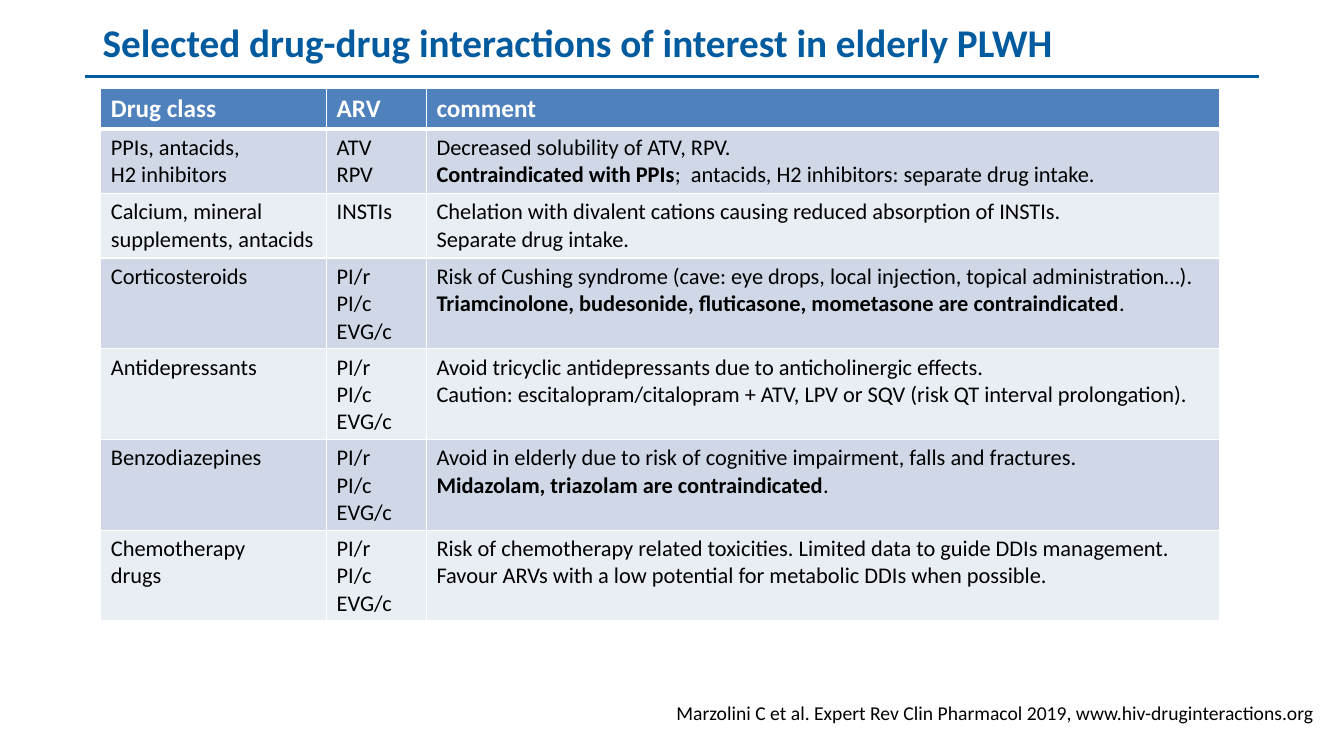
from lxml import etree
from pptx import Presentation
from pptx.dml.color import RGBColor
from pptx.enum.shapes import MSO_CONNECTOR
from pptx.enum.text import MSO_AUTO_SIZE
from pptx.oxml.ns import qn
from pptx.util import Pt

STRAIGHT = MSO_CONNECTOR.STRAIGHT
GROW = MSO_AUTO_SIZE.SHAPE_TO_FIT_TEXT
EMU_PER_PX = 9144
EMU_PER_POINT = 12700
COLORS = {
    "title": "025B9E",
    "text": "000000",
    "white": "FFFFFF",
    "header": "4F81BD",
    "odd_row": "D0D8E8",
    "even_row": "E9EDF4",
}
FORMATS = {
    "title": {"size": Pt(28), "bold": True, "color": "title"},
    "citation": {"size": Pt(14), "bold": False, "color": "text"},
    "header": {"size": Pt(18), "bold": True, "color": "white"},
    "body": {"size": Pt(16), "bold": False, "color": "text"},
}
COLUMN_WIDTHS = [224, 99, 787]
ROW_HEIGHTS = [40, 64, 64, 90, 90, 90, 90]
BOOSTED = "PI/r\nPI/c\nEVG/c"
BOLD_MARK = "**"
INTERACTIONS = [
    ["Drug class", "ARV", "comment"],
    ["PPIs, antacids,\nH2 inhibitors", "ATV\nRPV",
     "Decreased solubility of ATV, RPV.\n"
     "**Contraindicated with PPIs**;  antacids, H2 inhibitors: separate drug intake."],
    ["Calcium, mineral supplements, antacids", "INSTIs",
     "Chelation with divalent cations causing reduced absorption of INSTIs.\n"
     "Separate drug intake."],
    ["Corticosteroids", BOOSTED,
     "Risk of Cushing syndrome (cave: eye drops, local injection, topical administration…). "
     "**Triamcinolone, budesonide, fluticasone, mometasone are contraindicated**."],
    ["Antidepressants", BOOSTED,
     "Avoid tricyclic antidepressants due to anticholinergic effects.\n"
     "Caution: escitalopram/citalopram + ATV, LPV or SQV (risk QT interval prolongation)."],
    ["Benzodiazepines", BOOSTED,
     "Avoid in elderly due to risk of cognitive impairment, falls and fractures.\n"
     "**Midazolam, triazolam are contraindicated**."],
    ["Chemotherapy\ndrugs", BOOSTED,
     "Risk of chemotherapy related toxicities. Limited data to guide DDIs management. "
     "Favour ARVs with a low potential for metabolic DDIs when possible."],
]


def px(length):
    return length * EMU_PER_PX


def rgb(name):
    return RGBColor.from_string(COLORS[name])


def write_text(text_frame, text, style):
    for index, line in enumerate(text.split("\n")):
        paragraph = text_frame.add_paragraph() if index else text_frame.paragraphs[0]
        for part_index, part in enumerate(line.split(BOLD_MARK)):
            if not part:
                continue
            run = paragraph.add_run()
            run.text = part
            values = {"name": "Calibri", **FORMATS[style]}
            run.font.color.rgb = rgb(values.pop("color"))
            if part_index % 2:
                values["bold"] = True
            for attribute, value in values.items():
                setattr(run.font, attribute, value)


def add_label(slide, box, text, style):
    text_frame = slide.shapes.add_textbox(*map(px, box)).text_frame
    text_frame.word_wrap = False
    text_frame.auto_size = GROW
    write_text(text_frame, text, style)


def add_title(slide, box):
    left, top, width, height = box
    add_label(slide, (left + 8, top, 974, height - 6),
              "Selected drug-drug interactions of interest in elderly PLWH", "title")
    bottom = px(top + height)
    rule = slide.shapes.add_connector(STRAIGHT, px(left), bottom, px(left + width), bottom)
    rule.line.color.rgb = rgb("title")
    rule.line.width = Pt(2.25)
    etree.SubElement(rule._element.spPr, qn("a:effectLst"))


def add_borders(cell, widths):
    properties = cell._tc.get_or_add_tcPr()
    for side, width in widths.items():
        line = etree.SubElement(properties, qn(f"a:ln{side}"), w=str(width * EMU_PER_POINT))
        fill = etree.SubElement(line, qn("a:solidFill"))
        etree.SubElement(fill, qn("a:srgbClr"), val=COLORS["white"])


def add_interactions(slide, box):
    frame = slide.shapes.add_table(len(INTERACTIONS), len(COLUMN_WIDTHS), *map(px, box))
    table = frame.table
    for column, width in zip(table.columns, COLUMN_WIDTHS):
        column.width = px(width)
    for row_index, (row, height) in enumerate(zip(table.rows, ROW_HEIGHTS)):
        row.height = px(height)
        if row_index == 0:
            style, fill = "header", "header"
        else:
            style, fill = "body", "odd_row" if row_index % 2 else "even_row"
        borders = {"L": 1, "R": 1,
                   "T": 3 if row_index == 1 else 1,
                   "B": 3 if row_index == 0 else 1}
        for cell, text in zip(row.cells, INTERACTIONS[row_index]):
            add_borders(cell, borders)
            cell.fill.solid()
            cell.fill.fore_color.rgb = rgb(fill)
            write_text(cell.text_frame, text, style)


def add_citation(slide, box):
    add_label(slide, box,
              "Marzolini C et al. Expert Rev Clin Pharmacol 2019, www.hiv-druginteractions.org",
              "citation")


def main():
    presentation = Presentation()
    presentation.slide_width = px(1333)
    presentation.slide_height = px(750)
    slide = presentation.slides.add_slide(presentation.slide_layouts[6])
    add_title(slide, (84, 13, 1165, 63))
    add_interactions(slide, (100, 88, sum(COLUMN_WIDTHS), sum(ROW_HEIGHTS)))
    add_citation(slide, (661, 690, 659, 34))
    presentation.save("out.pptx")


if __name__ == "__main__":
    main()
